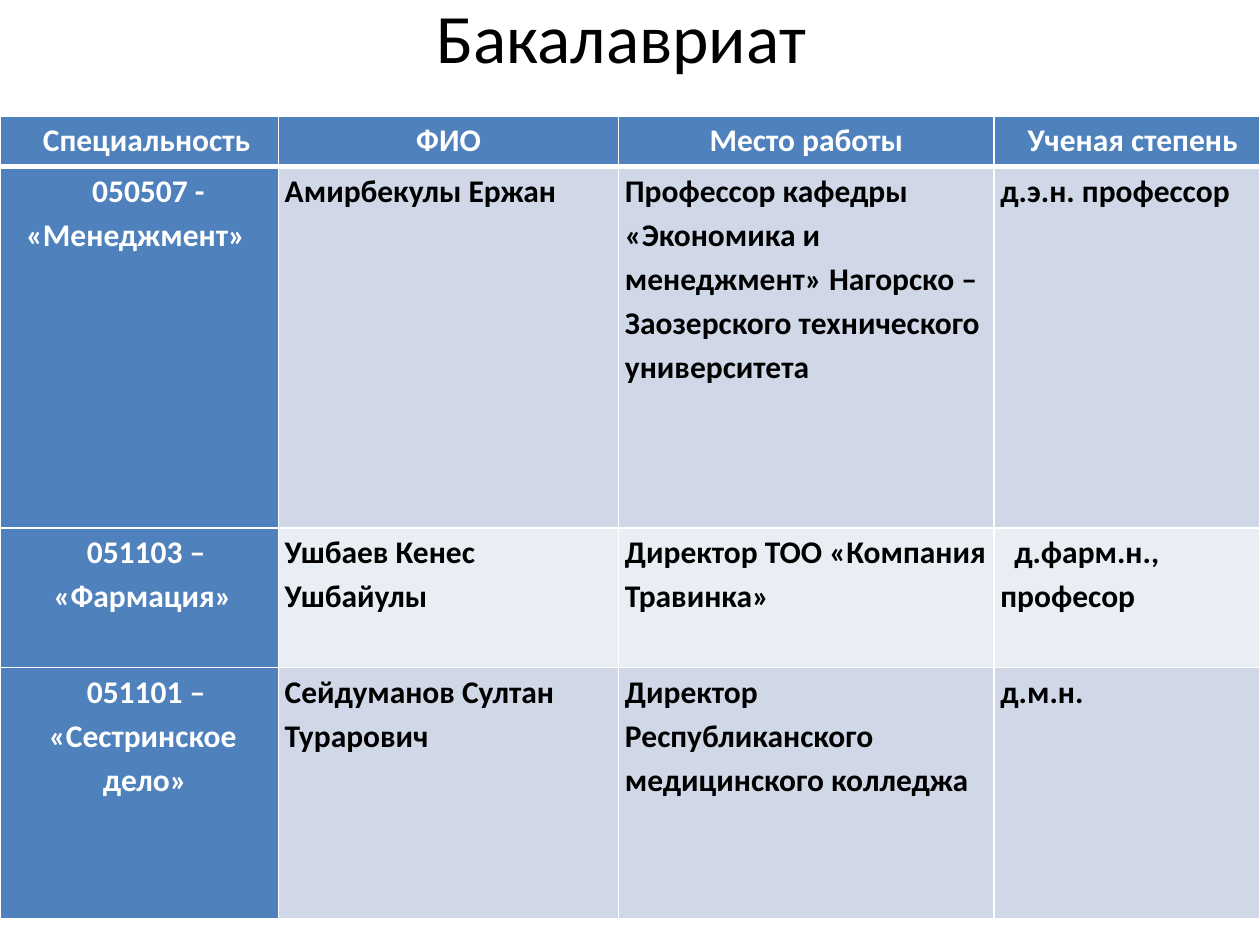
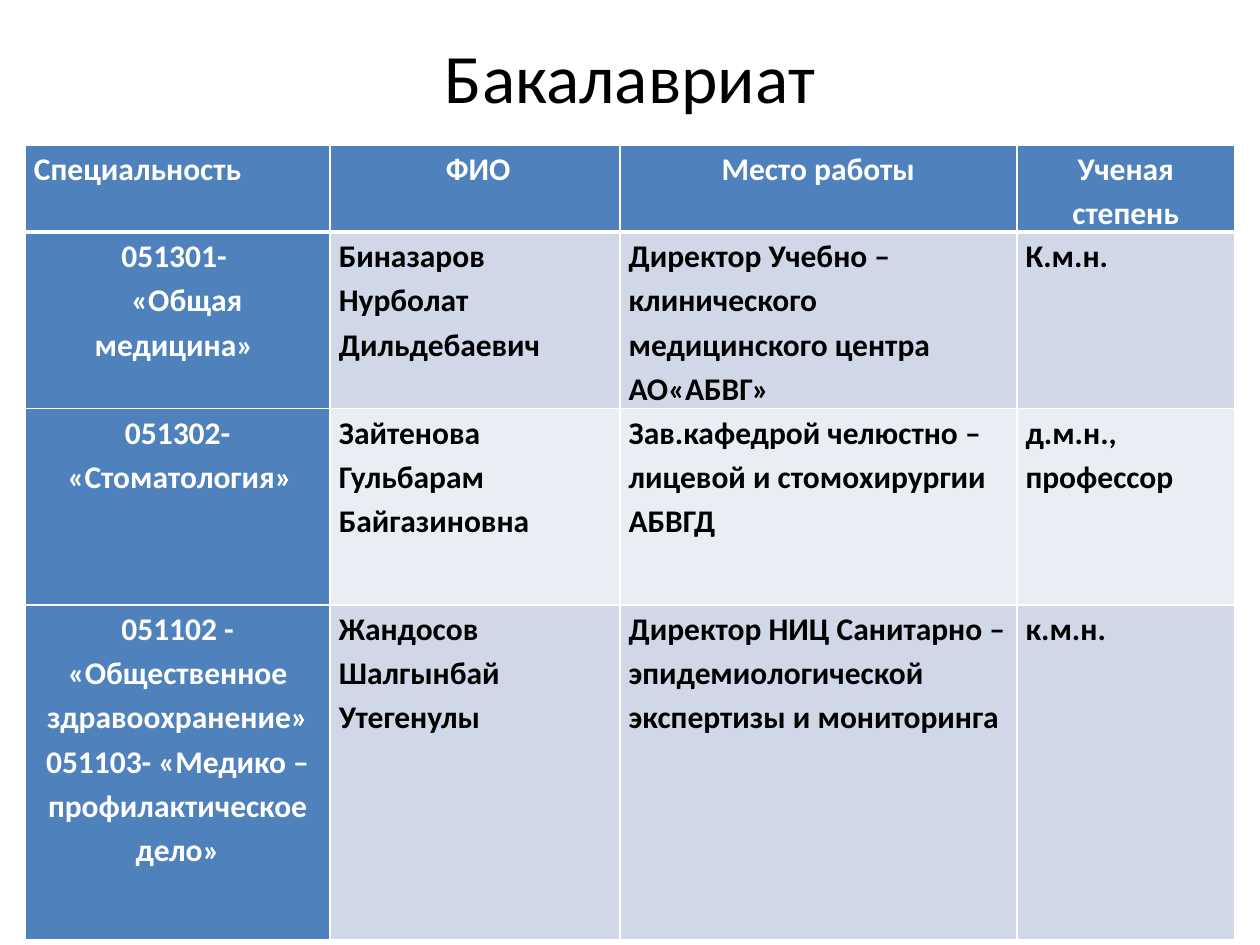
from dataclasses import dataclass

from lxml.etree import SubElement
from pptx import Presentation
from pptx.dml.color import RGBColor
from pptx.enum.text import MSO_ANCHOR as Anchor, PP_ALIGN as Align
from pptx.oxml.ns import qn
from pptx.util import Inches, Pt


@dataclass(frozen=True)
class Theme:
    font: str = "Calibri"
    title_size: float = 39.6
    cell_size: float = 18
    line_spacing: float = 1.15
    text: str = "000000"
    light_text: str = "FFFFFF"
    accent: str = "4F81BD"
    bands: tuple = ("D0D8E8", "E9EDF4")
    border: str = "FFFFFF"
    thin: float = 1
    thick: float = 3


THEME = Theme()
BLANK_LAYOUT = 6


@dataclass(frozen=True)
class Line:
    """One paragraph of a cell, with its left margin and first-line indent in inches."""
    text: str
    margin: float = 0
    indent: float = 0


def style_font(para, size, color, bold=False):
    font = para.font
    font.name, font.size, font.bold = THEME.font, Pt(size), bold
    font.color.rgb = RGBColor.from_string(color)


def add_title(page, box, text):
    shape = page.shapes.add_textbox(*map(Inches, box))
    frame = shape.text_frame
    frame.word_wrap = True
    frame.vertical_anchor = Anchor.MIDDLE
    para = frame.paragraphs[0]
    para.text = text
    para.alignment = Align.CENTER
    style_font(para, THEME.title_size, THEME.text)


def add_borders(cell, row):
    """Thin lines all round, with a thick one between header and body."""
    properties = cell._tc.get_or_add_tcPr()
    widths = {"L": THEME.thin, "R": THEME.thin,
              "T": THEME.thick if row == 1 else THEME.thin,
              "B": THEME.thick if row == 0 else THEME.thin}
    for side, width in widths.items():
        line = SubElement(properties, qn(f"a:ln{side}"), w=str(Pt(width)))
        fill = SubElement(line, qn("a:solidFill"))
        SubElement(fill, qn("a:srgbClr"), val=THEME.border)


def fill_cell(cell, content, row, column, inset):
    is_heading = row == 0 or column == 0
    cell.margin_left = cell.margin_right = Inches(inset)
    cell.margin_top = cell.margin_bottom = 0
    add_borders(cell, row)
    cell.fill.solid()
    cell.fill.fore_color.rgb = RGBColor.from_string(
        THEME.accent if is_heading else THEME.bands[(row - 1) % 2])

    lines = [Line(content)] if isinstance(content, str) else content
    frame = cell.text_frame
    for index, line in enumerate(lines):
        para = frame.add_paragraph() if index else frame.paragraphs[0]
        para.text = line.text
        para.line_spacing = THEME.line_spacing
        centred = is_heading and (row, column) != (0, 0)
        para.alignment = Align.CENTER if centred else Align.LEFT
        properties = para._p.get_or_add_pPr()
        properties.set("marL", str(Inches(line.margin)))
        properties.set("indent", str(Inches(line.indent)))
        style_font(para, THEME.cell_size,
                   THEME.light_text if is_heading else THEME.text, bold=True)


def add_staff_table(page, corner, widths, heights, inset, rows):
    box = (*corner, sum(widths), sum(heights))
    table = page.shapes.add_table(len(rows), len(widths), *map(Inches, box)).table
    for column, width in zip(table.columns, widths):
        column.width = Inches(width)
    for row, height in zip(table.rows, heights):
        row.height = Inches(height)
    for row, contents in enumerate(rows):
        for column, content in enumerate(contents):
            fill_cell(table.cell(row, column), content, row, column, inset)


def add_staff_page(deck, title, title_box, **table):
    page = deck.slides.add_slide(deck.slide_layouts[BLANK_LAYOUT])
    add_title(page, title_box, title)
    add_staff_table(page, **table)


def header(*indents):
    """Column headings, each with its own (margin, indent) pair."""
    names = ("Специальность", "ФИО", "Место работы", "Ученая степень")
    return [[Line(name, *pair)] for name, pair in zip(names, indents)]


MANAGEMENT_AND_PHARMACY = [
    header((0.5, -0.21), (0.5, -0.5), (0.29, -0.29), (0.5, -0.41)),
    [[Line(" 050507 - «Менеджмент» ", 0, 0.09)],
     "Амирбекулы Ержан",
     "Профессор кафедры «Экономика и менеджмент» Нагорско – "
     "Заозерского технического университета",
     "д.э.н. профессор"],
    [[Line("051103 –", 0.11), Line(" «Фармация»", 0.2, -0.2)],
     "Ушбаев Кенес Ушбайулы",
     "Директор ТОО «Компания Травинка»",
     [Line("д.фарм.н.,", 0.11), Line("професор", 0.5, -0.5)]],
    [[Line("051101 –", 0.11), Line(" «Сестринское дело»", 0.09, -0.09)],
     "Сейдуманов Султан Турарович",
     "Директор Республиканского медицинского колледжа",
     "д.м.н."],
]

MEDICINE_AND_HEALTH = [
    header((0.1, -0.1), (0.5, -0.45), (0.1, -0.1), (0, 0)),
    [[Line("051301- "), Line(" «Общая медицина» ", 0, 0.09)],
     "Биназаров Нурболат Дильдебаевич",
     "Директор Учебно – клинического медицинского центра АО«АБВГ»",
     [Line("К.м.н.", 0.5, -0.5)]],
    [[Line("051302- «Стоматология» ", 0.09, -0.09)],
     "Зайтенова Гульбарам Байгазиновна",
     "Зав.кафедрой челюстно –лицевой и стомохирургии АБВГД",
     "д.м.н., профессор"],
    ["051102 - «Общественное здравоохранение» "
     "051103- «Медико – профилактическое дело»",
     "Жандосов Шалгынбай Утегенулы",
     "Директор НИЦ Санитарно – эпидемиологической экспертизы и мониторинга",
     "к.м.н."],
]


def main():
    deck = Presentation()
    deck.slide_width, deck.slide_height = Inches(10), Inches(7.5)
    title = "Бакалавриат"
    add_staff_page(deck, title + "\v", (0.43, 0, 9, 1.23),
                   corner=(0, 0.92), widths=(2.21, 2.7, 2.98, 2.11),
                   heights=(0.4, 2.87, 1.11, 1.99), inset=0.05,
                   rows=MANAGEMENT_AND_PHARMACY)
    add_staff_page(deck, title, (0.5, 0.3, 9, 0.61),
                   corner=(0.2, 1.15), widths=(2.42, 2.3, 3.15, 1.73),
                   heights=(0.57, 1.4, 1.56, 2.66), inset=0.07,
                   rows=MEDICINE_AND_HEALTH)
    deck.save("out.pptx")


if __name__ == "__main__":
    main()
